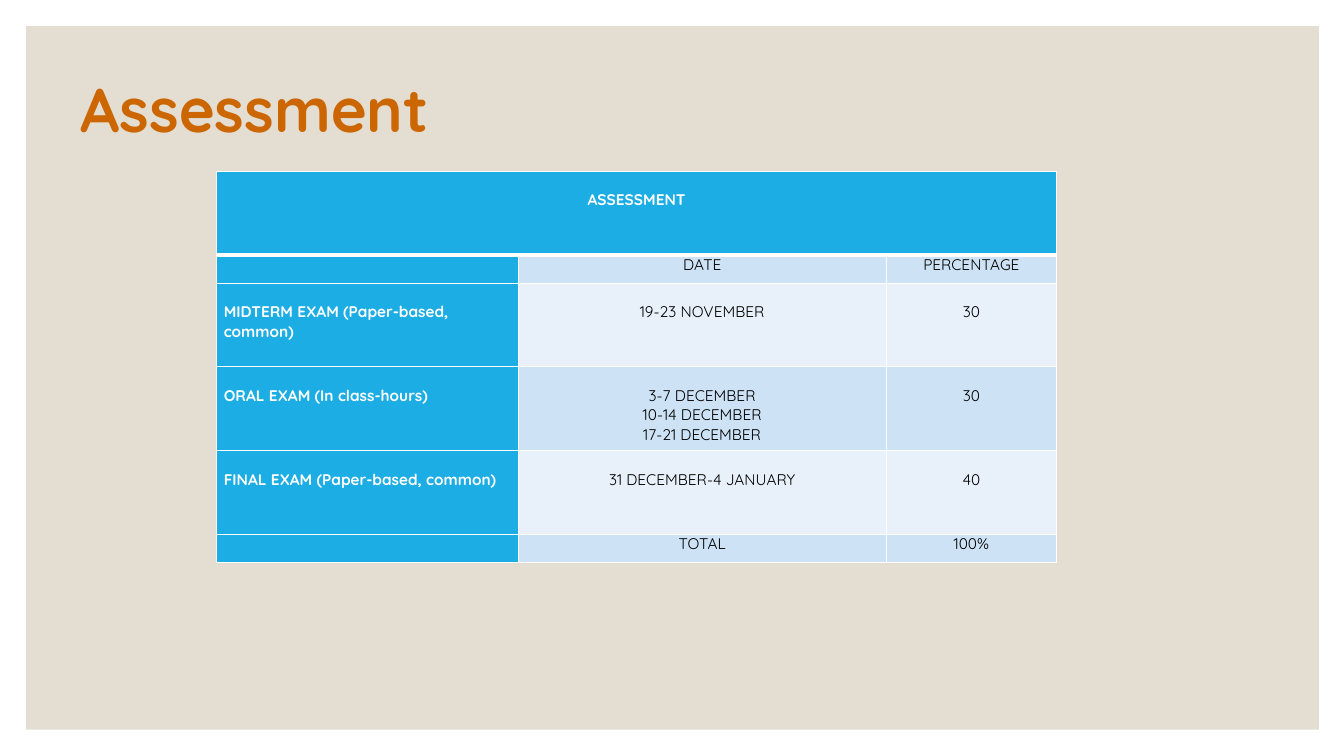
from dataclasses import dataclass

from lxml.etree import SubElement
from pptx import Presentation
from pptx.dml.color import RGBColor as RGB
from pptx.enum.shapes import MSO_SHAPE as SHAPE
from pptx.enum.text import MSO_ANCHOR as ANCHOR, PP_ALIGN as ALIGN
from pptx.oxml.ns import qn
from pptx.util import Inches, Pt


@dataclass(frozen=True)
class Theme:
    font: str = "Quicksand"
    panel: str = "E3DED1"
    title: str = "CC6600"
    accent: str = "1CADE4"
    band_dark: str = "CDE3F5"
    band_light: str = "E8F1FA"
    white: str = "FFFFFF"
    black: str = "000000"
    title_size: int = 44
    cell_size: int = 11


T = Theme()

COLUMNS = [2.99, 3.65, 1.69]
SHORT_ROW, TALL_ROW = 0.28, 0.83
TOP_GAP = 0.19  # one text line of space above the text in tall rows

# Row height, then the text of each column
ROWS = [
    (TALL_ROW, ["ASSESSMENT", "", ""]),
    (SHORT_ROW, ["", "DATE", "PERCENTAGE"]),
    (TALL_ROW, ["MIDTERM EXAM (Paper-based, common)", "19-23 NOVEMBER", "30"]),
    (TALL_ROW, ["ORAL EXAM (In class-hours)",
                "3-7 DECEMBER\n10-14 DECEMBER\n17-21 DECEMBER", "30"]),
    (TALL_ROW, ["FINAL EXAM (Paper-based, common)", "31 DECEMBER-4 JANUARY", "40"]),
    (SHORT_ROW, ["", "TOTAL", "100%"]),
]


def style_font(p, size, color, bold):
    p.font.name = T.font
    p.font.size = Pt(size)
    p.font.bold = bold
    p.font.color.rgb = RGB.from_string(color)


def add_panel(s):
    sp = s.shapes.add_shape(SHAPE.RECTANGLE, Inches(0.26), Inches(0.26),
                            Inches(12.82), Inches(6.98))
    sp.shadow.inherit = False
    sp.fill.solid()
    sp.fill.fore_color.rgb = RGB.from_string(T.panel)
    sp.line.fill.background()


def add_title(s, text):
    sp = s.shapes.add_textbox(Inches(0.7), Inches(0.53), Inches(11.47), Inches(1.17))
    tf = sp.text_frame
    tf.word_wrap = True
    tf.vertical_anchor = ANCHOR.MIDDLE
    p = tf.paragraphs[0]
    p.text = text
    p.line_spacing = 0.9
    style_font(p, T.title_size, T.title, True)


def set_borders(cell, top, bottom):
    tc_pr = cell._tc.get_or_add_tcPr()
    for side, width in (("L", 1), ("R", 1), ("T", top), ("B", bottom)):
        ln = SubElement(tc_pr, qn(f"a:ln{side}"), w=str(Pt(width)))
        SubElement(SubElement(ln, qn("a:solidFill")), qn("a:srgbClr"), val=T.white)


def fill_cell(cell, text, fill, color, bold, align, top_gap):
    cell.margin_left = cell.margin_right = Inches(0.07)
    cell.margin_top, cell.margin_bottom = Inches(top_gap), 0
    cell.fill.solid()
    cell.fill.fore_color.rgb = RGB.from_string(fill)
    cell.text_frame.text = text
    for p in cell.text_frame.paragraphs:
        p.alignment = align
        style_font(p, T.cell_size, color, bold)


def add_assessment_table(s):
    height = sum(h for h, _ in ROWS)
    table = s.shapes.add_table(len(ROWS), len(COLUMNS), Inches(2.15), Inches(1.7),
                               Inches(sum(COLUMNS)), Inches(height)).table
    table.first_row = table.horz_banding = False
    for column, width in zip(table.columns, COLUMNS):
        column.width = Inches(width)

    for i, (row_height, texts) in enumerate(ROWS):
        table.rows[i].height = Inches(row_height)
        top_gap = TOP_GAP if row_height == TALL_ROW else 0
        band = T.band_dark if i % 2 else T.band_light
        for j, text in enumerate(texts):
            cell = table.cell(i, j)
            heading = i == 0 or j == 0
            # The header row is set off by a thicker rule
            set_borders(cell, 3 if i == 1 else 1, 3 if i == 0 else 1)
            fill_cell(cell, text,
                      T.accent if heading else band,
                      T.white if heading else T.black,
                      heading,
                      ALIGN.LEFT if j == 0 and i > 0 else ALIGN.CENTER,
                      top_gap)
    table.cell(0, 0).merge(table.cell(0, len(COLUMNS) - 1))


def main():
    prs = Presentation()
    prs.slide_width, prs.slide_height = Inches(13.33), Inches(7.5)
    s = prs.slides.add_slide(prs.slide_layouts[6])
    add_panel(s)
    add_title(s, "Assessment")
    add_assessment_table(s)
    prs.save("out.pptx")


if __name__ == "__main__":
    main()
